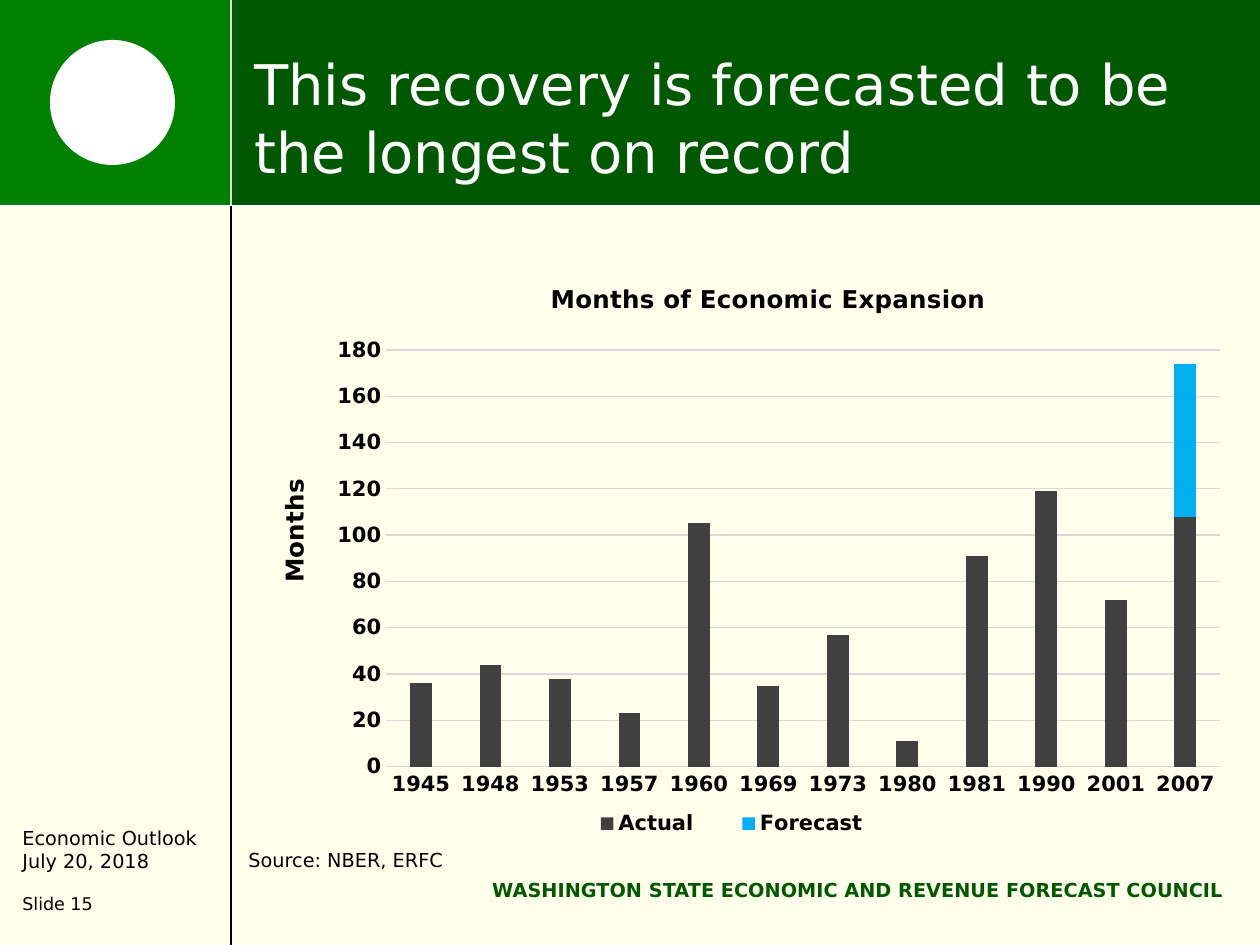
from lxml import etree
from pptx import Presentation
from pptx.chart.data import CategoryChartData
from pptx.dml.color import RGBColor
from pptx.enum.chart import XL_CHART_TYPE, XL_LEGEND_POSITION, XL_TICK_MARK
from pptx.enum.shapes import MSO_CONNECTOR, MSO_SHAPE
from pptx.enum.text import MSO_ANCHOR, PP_ALIGN
from pptx.oxml.ns import qn
from pptx.util import Pt

STACKED = XL_CHART_TYPE.COLUMN_STACKED
BOTTOM = XL_LEGEND_POSITION.BOTTOM
NO_TICK = XL_TICK_MARK.NONE
LINE = MSO_CONNECTOR.STRAIGHT
RECT, OVAL = MSO_SHAPE.RECTANGLE, MSO_SHAPE.OVAL
TOP, MIDDLE = MSO_ANCHOR.TOP, MSO_ANCHOR.MIDDLE
LEFT, RIGHT = PP_ALIGN.LEFT, PP_ALIGN.RIGHT
SCALE = 914400 / 126
FACE = "DejaVu Sans"
rgb = RGBColor.from_string


def emu(*nums):
    return [round(n * SCALE) for n in nums]


def style(font, size, color="000000", bold=False):
    font.name = FACE
    font.size = Pt(size)
    font.bold = bold
    font.color.rgb = rgb(color)


deck = Presentation()
deck.slide_width, deck.slide_height = emu(1260, 945)
slide = deck.slides.add_slide(deck.slide_layouts[6])
slide.background.fill.solid()
slide.background.fill.fore_color.rgb = rgb("FFFFEB")
shapes = slide.shapes

for kind, box, color in [
    (RECT, (229, 0, 1031, 206), "005800"),
    (RECT, (0, 0, 231, 206), "008000"),
    (OVAL, (50, 40, 125, 125), "FFFFFF"),
]:
    shape = shapes.add_shape(kind, *emu(*box))
    shape.shadow.inherit = False
    shape.fill.solid()
    shape.fill.fore_color.rgb = rgb(color)
    shape.line.fill.background()

for ends, color in [
    ((231, 0, 231, 945), "DDDDDD"),
    ((0, 206, 1260, 206), "FFFFFF"),
    ((231, 206, 231, 945), "000000"),
]:
    line = shapes.add_connector(LINE, *emu(*ends))
    line.line.color.rgb = rgb(color)
    line.line.width = Pt(0.75)
    props = line._element.find(qn("p:spPr"))
    etree.SubElement(props, qn("a:effectLst"))

for box, anchor, align, color, bold, paras in [
    ((242, 38, 966, 158), MIDDLE, LEFT, "FFFFFF", False,
     [("This recovery is forecasted to be the longest on record", 32, 0)]),
    ((10, 820, 228, 102), TOP, LEFT, "000000", False,
     [("Economic Outlook", 11, 0), ("July 20, 2018", 11, 0), ("Slide 15", 10, 12)]),
    ((469, 865, 767, 49), MIDDLE, RIGHT, "005800", True,
     [("WASHINGTON STATE ECONOMIC AND REVENUE FORECAST COUNCIL", 11, 0)]),
    ((236, 842, 762, 37), TOP, LEFT, "000000", False,
     [("Source: NBER, ERFC", 11, 0)]),
]:
    frame = shapes.add_textbox(*emu(*box)).text_frame
    frame.word_wrap = True
    frame.vertical_anchor = anchor
    for i, (text, size, gap) in enumerate(paras):
        para = frame.add_paragraph() if i else frame.paragraphs[0]
        para.alignment = align
        para.space_before = Pt(gap)
        run = para.add_run()
        run.text = text
        style(run.font, size, color, bold)

data = CategoryChartData()
data.categories = ["1945", "1948", "1953", "1957", "1960", "1969",
                   "1973", "1980", "1981", "1990", "2001", "2007"]
data.add_series("Actual", [36, 44, 38, 23, 105, 35, 57, 11, 91, 119, 72, 108])
data.add_series("Forecast", [0] * 11 + [66])
chart = shapes.add_chart(STACKED, *emu(253, 266, 987, 587), data).chart
style(chart.font, 10, bold=True)

plot = chart.plots[0]
plot.gap_width = 219
plot.overlap = 100
plot.vary_by_categories = False
for bars, color in zip(plot.series, ["404040", "00B0F0"]):
    bars.format.fill.solid()
    bars.format.fill.fore_color.rgb = rgb(color)

years, months = chart.category_axis, chart.value_axis
for axis in (years, months):
    axis.major_tick_mark = axis.minor_tick_mark = NO_TICK
    style(axis.tick_labels.font, 12, bold=True)
months.minimum_scale, months.maximum_scale = 0, 180
months.major_unit = 20
months.format.line.fill.background()
for rule in (years.format.line, months.major_gridlines.format.line):
    rule.color.rgb = rgb("D9D9D9")
    rule.width = Pt(0.75)

chart.has_title = True
for title, text in [(chart.chart_title, "Months of Economic Expansion"),
                    (months.axis_title, "Months")]:
    run = title.text_frame.paragraphs[0].add_run()
    run.text = text
    style(run.font, 14, bold=True)
body = months.axis_title.text_frame._txBody.find(qn("a:bodyPr"))
body.set("rot", "-5400000")
body.set("vert", "horz")

chart.has_legend = True
chart.legend.position = BOTTOM
chart.legend.include_in_layout = False
style(chart.legend.font, 12, bold=True)

for part, spot, places in [
    (chart._chartSpace.chart.plotArea, 0, {"x": 0.135, "y": 0.143, "w": 0.845, "h": 0.71}),
    (chart.chart_title._element, 1, {"x": 0.297, "y": 0.02}),
    (months.axis_title._element, 1, {"x": 0.02, "y": 0.355}),
    (chart.legend._element, 1, {"x": 0.31, "y": 0.92, "w": 0.35, "h": 0.06}),
]:
    for old in part.findall(qn("c:layout")):
        part.remove(old)
    layout = etree.Element(qn("c:layout"))
    part.insert(spot, layout)
    manual = etree.SubElement(layout, qn("c:manualLayout"))
    if spot == 0:
        etree.SubElement(manual, qn("c:layoutTarget")).set("val", "inner")
    for key in ("x", "y"):
        etree.SubElement(manual, qn(f"c:{key}Mode")).set("val", "edge")
    for key, value in places.items():
        etree.SubElement(manual, qn(f"c:{key}")).set("val", str(value))

deck.save("out.pptx")
